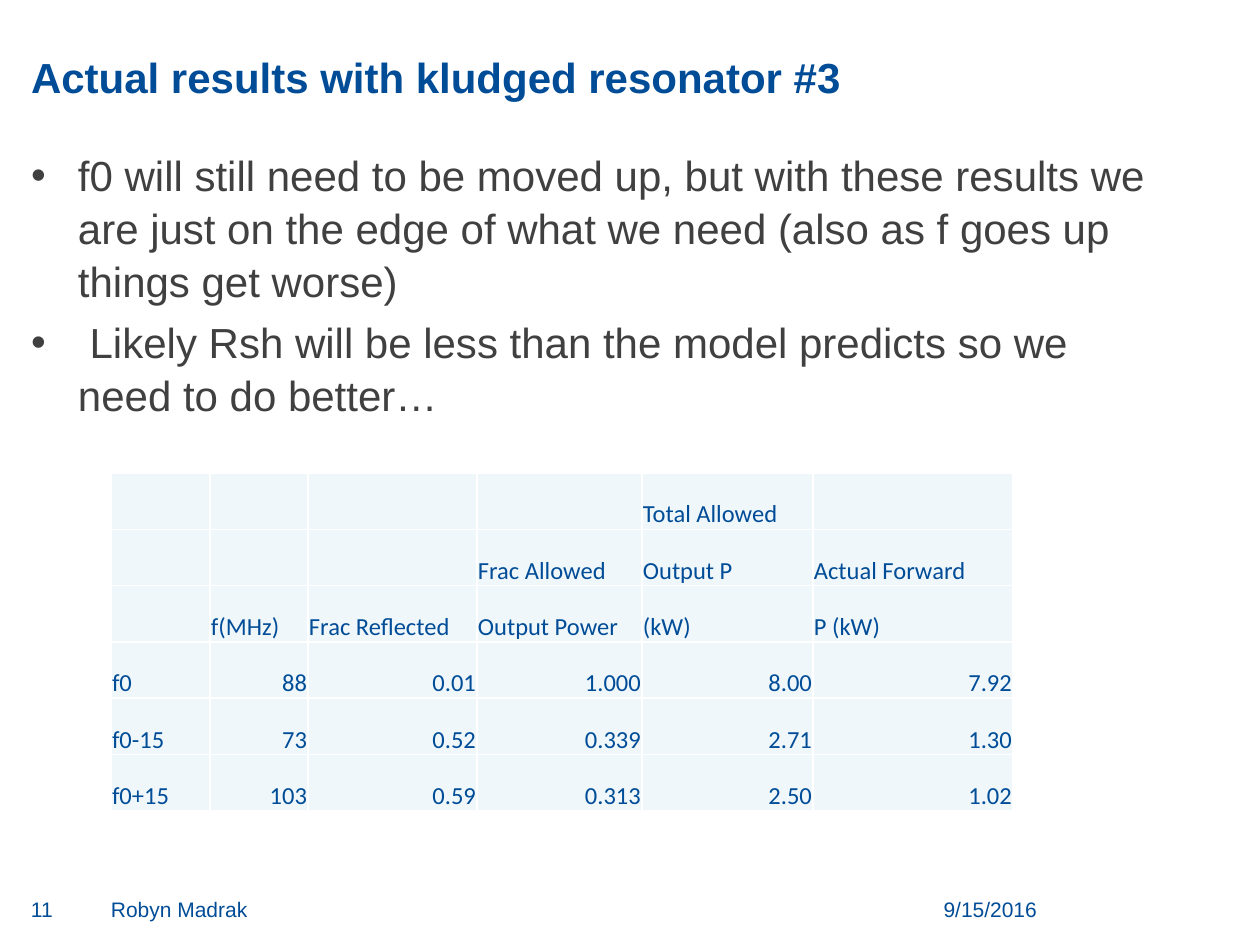
from lxml.etree import SubElement
from pptx import Presentation
from pptx.dml.color import RGBColor
from pptx.enum.text import MSO_ANCHOR as Anchor, MSO_AUTO_SIZE as AutoSize, PP_ALIGN as Align
from pptx.oxml import parse_xml
from pptx.oxml.ns import nsdecls, qn
from pptx.util import Emu, Pt

PX_PER_INCH = 126
BLUE = RGBColor(0x00, 0x4C, 0x97)
GRAY = RGBColor(0x40, 0x40, 0x40)
PALE_BLUE = RGBColor(0xEF, 0xF7, 0xFB)
WHITE = RGBColor(0xFF, 0xFF, 0xFF)

TITLE_FONT = {"name": "Arial", "size": Pt(24), "bold": True}
BODY_FONT = {"name": "Arial", "size": Pt(24)}
FOOTER_FONT = {"name": "Arial", "size": Pt(12)}
TABLE_FONT = {"name": "Calibri", "size": Pt(14)}

BULLETS = [
    "f0 will still need to be moved up, but with these results we are just on "
    "the edge of what we need (also as f goes up things get worse)",
    " Likely Rsh will be less than the model predicts so we need to do better…",
]
FOOTERS = [
    ("9/15/2016", (888, 897, 149, 33), Align.RIGHT),
    ("Robyn Madrak", (111, 897, 741, 33), Align.LEFT),
    ("11", (31, 897, 62, 33), Align.LEFT),
]
COLUMN_WIDTHS = [99, 98, 169, 165, 171, 200]
HEADER_ROWS = [
    ["", "", "", "", "Total Allowed", ""],
    ["", "", "", "Frac Allowed", "Output P", "Actual Forward"],
    ["", "f(MHz)", "Frac Reflected", "Output Power", "(kW)", "P (kW)"],
]
DATA_ROWS = [
    ["f0", "88", "0.01", "1.000", "8.00", "7.92"],
    ["f0-15", "73", "0.52", "0.339", "2.71", "1.30"],
    ["f0+15", "103", "0.59", "0.313", "2.50", "1.02"],
]


def px(length):
    return Emu(round(length * 914400 / PX_PER_INCH))


def set_format(target, values):
    for name, value in values.items():
        setattr(target, name, value)


def write(paragraph, text, font, color, alignment=Align.LEFT):
    paragraph.alignment = alignment
    run = paragraph.add_run()
    run.text = text
    set_format(run.font, font)
    run.font.color.rgb = color


def set_frame(text_frame, anchor=Anchor.TOP):
    """Wrap the text, with no margins and no resizing."""
    set_format(text_frame, {
        "margin_left": 0, "margin_top": 0, "margin_right": 0, "margin_bottom": 0,
        "word_wrap": True, "auto_size": AutoSize.NONE, "vertical_anchor": anchor,
    })


def add_text_frame(slide, box):
    text_frame = slide.shapes.add_textbox(*map(px, box)).text_frame
    set_frame(text_frame)
    return text_frame


def set_title(slide, text, box):
    title = slide.shapes.title
    set_format(title, dict(zip(("left", "top", "width", "height"), map(px, box))))
    set_frame(title.text_frame, Anchor.BOTTOM)
    write(title.text_frame.paragraphs[0], text, TITLE_FONT, BLUE)


def add_bullets(slide, texts, box):
    text_frame = add_text_frame(slide, box)
    for index, text in enumerate(texts):
        paragraph = text_frame.add_paragraph() if index else text_frame.paragraphs[0]
        properties = paragraph._p.get_or_add_pPr()
        properties.set("marL", str(px(47)))
        properties.set("indent", str(-px(47)))
        SubElement(properties, qn("a:buFont"), typeface="Arial")
        SubElement(properties, qn("a:buChar"), char="•")
        paragraph.line_spacing = 1.05
        if index:
            paragraph.space_before = Pt(4.8)
        write(paragraph, text, BODY_FONT, GRAY)


def add_borders(cell):
    properties = cell._tc.get_or_add_tcPr()
    for side in ("lnL", "lnR", "lnT", "lnB"):
        properties.append(parse_xml(
            f'<a:{side} {nsdecls("a")} w="{Pt(1)}"><a:solidFill>'
            f'<a:srgbClr val="{WHITE}"/></a:solidFill></a:{side}>'))


def fill_cell(cell, text, alignment):
    set_format(cell, {
        "margin_left": px(1), "margin_top": px(1), "margin_right": px(1),
        "margin_bottom": 0, "vertical_anchor": Anchor.BOTTOM,
    })
    add_borders(cell)
    cell.fill.solid()
    cell.fill.fore_color.rgb = PALE_BLUE
    if text:
        write(cell.text_frame.paragraphs[0], text, TABLE_FONT, BLUE, alignment)


def add_results_table(slide, left, top, height):
    rows = HEADER_ROWS + DATA_ROWS
    size = (left, top, sum(COLUMN_WIDTHS), height)
    table = slide.shapes.add_table(len(rows), len(COLUMN_WIDTHS), *map(px, size)).table
    set_format(table, {"first_row": False, "horz_banding": False})
    for column, width in zip(table.columns, COLUMN_WIDTHS):
        column.width = px(width)
    for row_index, row in enumerate(rows):
        for column_index, text in enumerate(row):
            is_number = row_index >= len(HEADER_ROWS) and column_index > 0
            alignment = Align.RIGHT if is_number else Align.LEFT
            fill_cell(table.cell(row_index, column_index), text, alignment)


def main():
    presentation = Presentation()
    set_format(presentation, {"slide_width": px(1260), "slide_height": px(945)})
    slide = presentation.slides.add_slide(presentation.slide_layouts.get_by_name("Title Only"))
    set_title(slide, "Actual results with kludged resonator #3", (31, 14, 1197, 88))
    add_bullets(slide, BULLETS, (31, 147, 1129, 293))
    for text, box, alignment in FOOTERS:
        write(add_text_frame(slide, box).paragraphs[0], text, FOOTER_FONT, BLUE, alignment)
    add_results_table(slide, 111, 473, 338)
    presentation.save("out.pptx")


if __name__ == "__main__":
    main()
